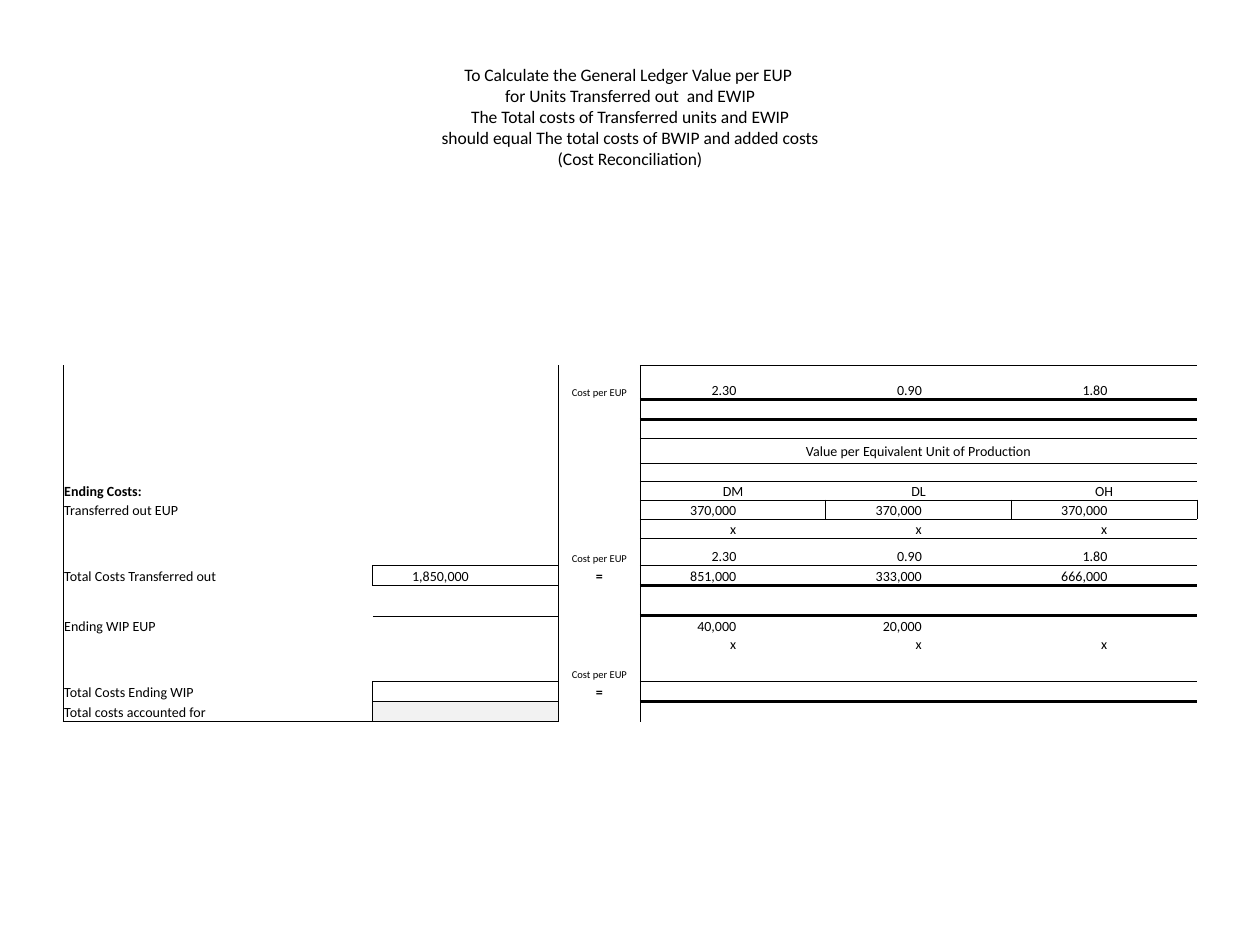
from lxml import etree
from pptx import Presentation
from pptx.dml.color import RGBColor
from pptx.enum import text
from pptx.oxml import ns
from pptx.util import Inches, Pt

theme = {
    "font": "Calibri",
    "ink": "000000",
    "shade": "F2F2F2",
    "title": 10,
    "body": 8,
    "small": 6,
    "thin": 0.5,
    "thick": 2,
}

deck = Presentation()
deck.slide_width = Inches(10)
deck.slide_height = Inches(7.5)
slide = deck.slides.add_slide(deck.slide_layouts[5])


def style(para, size, align, bold=False):
    para.alignment = align
    for run in para.runs:
        run.font.name = theme["font"]
        run.font.size = Pt(size)
        run.font.bold = bold
        run.font.color.rgb = RGBColor.from_string(theme["ink"])


title = slide.shapes.title
title.left, title.top = Inches(0.5), Inches(0.3)
title.width, title.height = Inches(9), Inches(1.25)
title.text_frame.vertical_anchor = text.MSO_ANCHOR.MIDDLE
head = title.text_frame.paragraphs[0]
head.text = "\n".join([
    "To Calculate the General Ledger Value per EUP ",
    "for Units Transferred out  and EWIP",
    "The Total costs of Transferred units and EWIP",
    "should equal The total costs of BWIP and added costs",
    "(Cost Reconciliation)",
])
style(head, theme["title"], text.PP_ALIGN.CENTER)

wide = (9 - 1.57 - 0.89 - 0.65) / 4
cols = [1.57, 0.89, wide, 0.65, wide, wide, wide]
rows = [0.27, 0.16, 0.15, 0.2, 0.14, 0.15, 0.15, 0.15,
        0.22, 0.16, 0.24, 0.15, 0.15, 0.22, 0.16, 0.16]
rates = ["Cost per EUP", "2.30", "0.90", "1.80"]
data = {
    0: ["", "", "", *rates],
    3: ["", "", "", "", "Value per Equivalent Unit of Production"],
    5: ["Ending Costs:", "", "", "", "DM", "DL", "OH"],
    6: ["Transferred out EUP", "", "", "", "370,000", "370,000", "370,000"],
    7: ["", "", "", "", "x", "x", "x"],
    8: ["", "", "", *rates],
    9: ["Total Costs Transferred out", "", "1,850,000", "=",
        "851,000", "333,000", "666,000"],
    11: ["Ending WIP EUP", "", "", "", "40,000", "20,000"],
    12: ["", "", "", "", "x", "x", "x"],
    13: ["", "", "", "Cost per EUP"],
    14: ["Total Costs Ending WIP", "", "", "="],
    15: ["Total costs accounted for"],
}

frame = slide.shapes.add_table(len(rows), len(cols), Inches(0.5), Inches(2.9),
                               Inches(9), Inches(2.82))
table = frame.table
table.first_row = False
table.horz_banding = False
props = table._tbl.tblPr
props.find(ns.qn("a:tableStyleId")).text = "{2D5ABB26-0587-4C30-8999-92F81FD0307C}"
for col, width in zip(table.columns, cols):
    col.width = Inches(width)
for row, height in zip(table.rows, rows):
    row.height = Inches(height)

table.cell(3, 4).merge(table.cell(3, 6))
for r in (9, 14, 15):
    table.cell(r, 0).merge(table.cell(r, 1))

edges = {}
mates = {"L": (0, -1, "R"), "R": (0, 1, "L"), "T": (-1, 0, "B"), "B": (1, 0, "T")}


def rule(r, c, sides, width=theme["thin"]):
    for side in sides:
        down, over, mate = mates[side]
        edges[r, c, side] = width
        edges[r + down, c + over, mate] = width


for r in range(len(rows)):
    rule(r, 0, "L")
    rule(r, 2, "R")
for c in range(3):
    rule(15, c, "B")
for r in (9, 14, 15):
    rule(r, 2, "LTRB")
for c in (4, 5, 6):
    rule(6, c, "LTRB")
    rule(3, c, "TB")
    for r in (0, 9, 14):
        rule(r, c, "T")
        rule(r, c, "B", theme["thick"])
rule(3, 4, "L")
rule(3, 6, "R")

for r in range(len(rows)):
    for c in range(len(cols)):
        cell = table.cell(r, c)
        cell.margin_left = cell.margin_right = cell.margin_top = Inches(0.01)
        cell.margin_bottom = 0
        cell.vertical_anchor = text.MSO_ANCHOR.MIDDLE if r == 3 else text.MSO_ANCHOR.BOTTOM
        tag = cell._tc.get_or_add_tcPr()
        for side in "LRTB":
            if (r, c, side) in edges:
                line = etree.SubElement(tag, ns.qn("a:ln" + side),
                                        w=str(Pt(edges[r, c, side])))
                fill = etree.SubElement(line, ns.qn("a:solidFill"))
                etree.SubElement(fill, ns.qn("a:srgbClr"), val=theme["ink"])
        if (r, c) == (15, 2):
            cell.fill.solid()
            cell.fill.fore_color.rgb = RGBColor.from_string(theme["shade"])
        else:
            cell.fill.background()

        para = cell.text_frame.paragraphs[0]
        words = data.get(r, [])[c:c + 1]
        if not words or not words[0]:
            etree.SubElement(para._p, ns.qn("a:endParaRPr"),
                             sz=str(theme["small"] * 100))
            continue
        word = words[0]
        para.text = word
        align = text.PP_ALIGN.LEFT if c == 0 else text.PP_ALIGN.CENTER
        if word[0].isdigit():
            align = text.PP_ALIGN.RIGHT
            cell.margin_right = Inches(0.71)
        size = theme["small"] if word == "Cost per EUP" else theme["body"]
        style(para, size, align, word in ("Ending Costs:", "="))

deck.save("out.pptx")
